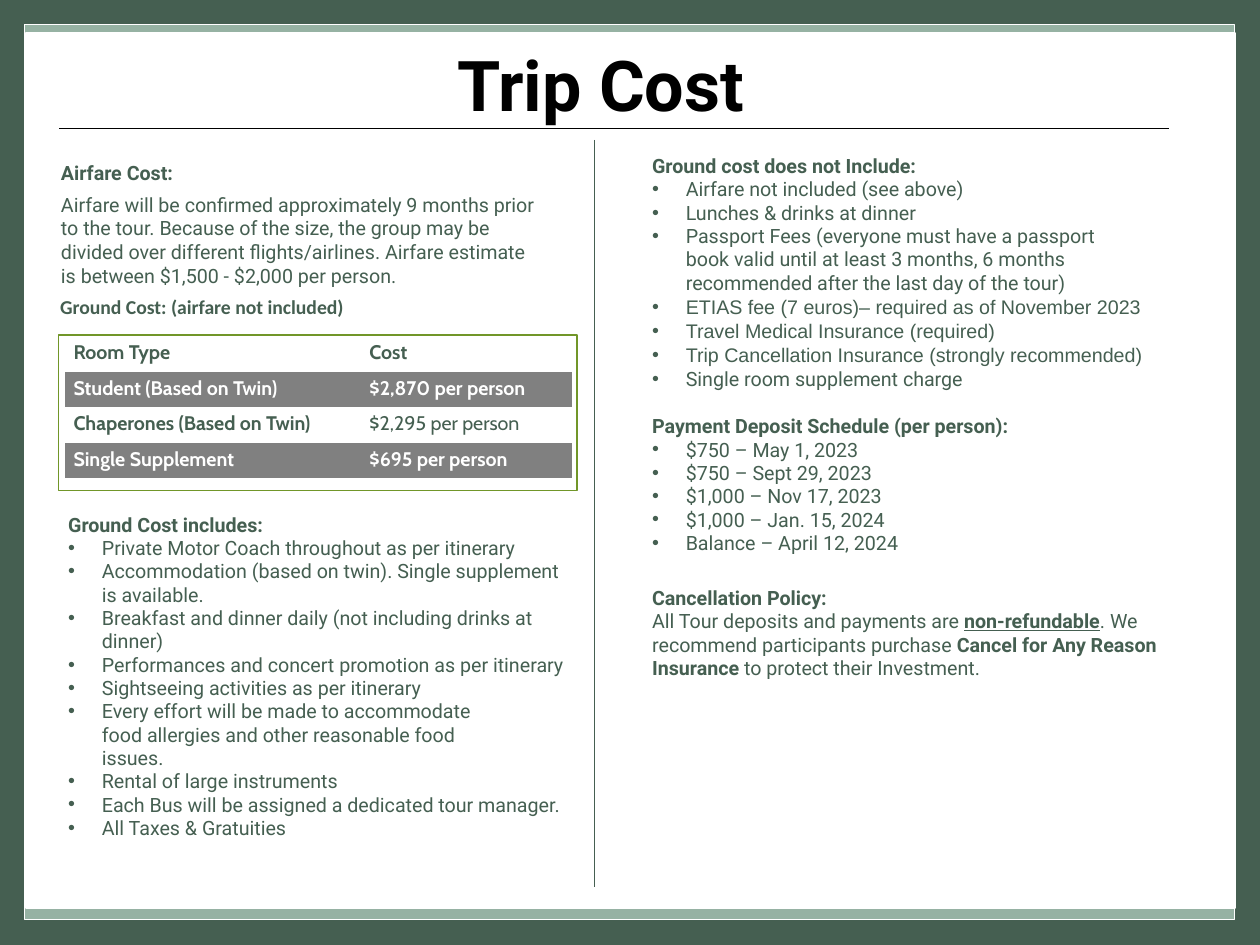
"""Builds the Trip Cost slide with prices, inclusions, deposits and policy."""
from dataclasses import dataclass

from lxml.etree import SubElement
from pptx import Presentation
from pptx.dml.color import RGBColor as RGB
from pptx.enum.shapes import MSO_CONNECTOR as LINE, MSO_SHAPE as SHAPE
from pptx.enum.text import MSO_ANCHOR as ANCHOR, MSO_AUTO_SIZE as AUTO, PP_ALIGN as ALIGN
from pptx.oxml.ns import qn
from pptx.util import Inches, Pt


@dataclass(frozen=True)
class Theme:
    green: RGB = RGB(0x45, 0x5F, 0x51)
    sage: RGB = RGB(0x96, 0xB2, 0xA3)
    lime: RGB = RGB(0x71, 0x96, 0x29)
    gray: RGB = RGB(0x80, 0x80, 0x80)
    white: RGB = RGB(0xFF, 0xFF, 0xFF)
    black: RGB = RGB(0, 0, 0)
    title_size: float = 56.9
    text_size: int = 16
    pitch: float = 18.95
    main: str = "Roboto"
    plain: str = "Arial"
    table: str = "Cabin"
    heading: str = "Calibri"


theme = Theme()


def style(run, bold=False, font=theme.main, color=theme.green, size=theme.text_size):
    run.font.name, run.font.bold, run.font.size = font, bold, Pt(size)
    run.font.color.rgb = color


def write(frame, text, bold=False, font=theme.main, bullet=False, before=0, right=0, left=0):
    first = frame.paragraphs[0]
    paragraph = frame.add_paragraph() if first.runs else first
    paragraph.text = text
    props = paragraph._p.get_or_add_pPr()
    props.set("marL", str(Inches(0.38 if bullet else left)))
    props.set("indent", str(Inches(-0.38 if bullet else 0)))
    props.set("marR", str(Inches(right)))
    if bullet:
        SubElement(props, qn("a:buFont"), typeface=theme.plain)
        SubElement(props, qn("a:buChar"), char="•")
    else:
        SubElement(props, qn("a:buNone"))
    paragraph.alignment = ALIGN.LEFT
    paragraph.line_spacing = Pt(theme.pitch)
    paragraph.space_before = Pt(before)
    paragraph.space_after = Pt(0)
    for run in paragraph.runs:
        style(run, bold, font)
    return paragraph


deck = Presentation()
deck.slide_width, deck.slide_height = Inches(14.22), Inches(10.67)
slide = deck.slides.add_slide(deck.slide_layouts[3])
slide.background.fill.solid()
slide.background.fill.fore_color.rgb = theme.green
shapes = slide.shapes
title, includes, terms = slide.placeholders

for left, top, height, fill, width in (
    (0.28, 0.28, 10.1, theme.sage, 1),
    (0.29, 0.37, 9.88, theme.white, 1.5),
):
    panel = shapes.add_shape(SHAPE.RECTANGLE, Inches(left), Inches(top), Inches(13.65), Inches(height))
    panel.shadow.inherit = False
    panel.fill.solid()
    panel.fill.fore_color.rgb = fill
    panel.line.color.rgb = theme.white
    panel.line.width = Pt(width)
    title.element.addprevious(panel.element)

airfare = shapes.add_textbox(0, 0, 0, 0)
for box, left, top, width, height in (
    (title, 5.06, 0.42, 3.52, 1.06),
    (includes, 0.67, 5.74, 5.85, 4.05),
    (airfare, 0.57, 1.77, 5.6, 1.91),
    (terms, 7.26, 1.69, 5.93, 6.48),
):
    box.left, box.top, box.width, box.height = map(Inches, (left, top, width, height))
    box.text_frame.auto_size = AUTO.NONE
    box.text_frame.word_wrap = box is not title
    box.text_frame.vertical_anchor = ANCHOR.TOP

title.text_frame.text = "Trip Cost"
title.text_frame.paragraphs[0].alignment = ALIGN.LEFT
style(title.text_frame.paragraphs[0].runs[0], True, color=theme.black, size=theme.title_size)

for x1, y1, x2, y2, color in (
    (6.71, 1.58, 6.71, 10.01, theme.green),
    (0.67, 1.45, 13.19, 1.45, theme.black),
):
    rule = shapes.add_connector(LINE.STRAIGHT, Inches(x1), Inches(y1), Inches(x2), Inches(y2))
    rule.line.color.rgb = color
    rule.line.width = Pt(0.79)
    SubElement(rule.element.spPr, qn("a:effectLst"))

write(airfare.text_frame, "Airfare Cost:", True, left=0.02)
estimate = write(
    airfare.text_frame,
    "Airfare will be confirmed approximately 9 months prior to the tour. Because of the size, "
    "the group may be divided over different flights/airlines. Airfare estimate is between "
    "$1,500 - $2,000 per person.",
    before=6.6, left=0.02)
estimate.line_spacing = Pt(19.2)
write(airfare.text_frame, "Ground Cost: (airfare not included)", True, theme.heading, before=6.9, left=0.01)

prices = (
    ("Room Type", "Cost"),
    ("Student (Based on Twin)", "$2,870 per person"),
    ("Chaperones (Based on Twin)", "$2,295 per person"),
    ("Single Supplement", "$695 per person"),
)
price_table = shapes.add_table(4, 2, Inches(0.73), Inches(3.8), Inches(5.73), Inches(1.6)).table
price_table.first_row = price_table.horz_banding = False
price_table._tbl.tblPr[0].text = "{2D5ABB26-0587-4C30-8999-92F81FD0307C}"
for column, width in zip(price_table.columns, (3.34, 2.39)):
    column.width = Inches(width)
for row, texts in enumerate(prices):
    shaded = row % 2 == 1
    for col, text in enumerate(texts):
        cell = price_table.cell(row, col)
        cell.text = text
        style(cell.text_frame.paragraphs[0].runs[0], (row, col) != (2, 1), theme.table,
              theme.white if shaded else theme.green)
        if shaded:
            cell.fill.solid()
            cell.fill.fore_color.rgb = theme.gray
        else:
            cell.fill.background()

price_frame = shapes.add_shape(SHAPE.RECTANGLE, Inches(0.66), Inches(3.78), Inches(5.85), Inches(1.76))
price_frame.shadow.inherit = False
price_frame.fill.background()
price_frame.line.color.rgb = theme.lime
price_frame.line.width = Pt(1.5)

write(includes.text_frame, "Ground Cost includes:", True)
for item, right in (
    ("Private Motor Coach throughout as per itinerary", 0),
    ("Accommodation (based on twin). Single supplement is available.", 0),
    ("Breakfast and dinner daily (not including drinks at dinner)", 0),
    ("Performances and concert promotion as per itinerary", 0),
    ("Sightseeing activities as per itinerary", 0),
    ("Every effort will be made to accommodate food allergies and other reasonable food issues.", 0.9),
    ("Rental of large instruments", 0),
    ("Each Bus will be assigned a dedicated tour manager.", 0),
    ("All Taxes & Gratuities", 0),
):
    write(includes.text_frame, item, bullet=True, right=right)

write(terms.text_frame, "Ground cost does not Include:", True)
for item, font, before, right in (
    ("Airfare not included (see above)", theme.main, 0, 0),
    ("Lunches & drinks at dinner", theme.main, 0, 0),
    ("Passport Fees (everyone must have a passport book valid until at least 3 months, "
     "6 months recommended after the last day of the tour)", theme.main, 0, 0.4),
    ("ETIAS fee (7 euros)– required as of November 2023", theme.plain, 1, 0),
    ("Travel Medical Insurance (required)", theme.plain, 0.6, 0),
    ("Trip Cancellation Insurance (strongly recommended)", theme.plain, 0.6, 0),
    ("Single room supplement charge", theme.main, 0.6, 0),
):
    write(terms.text_frame, item, font=font, bullet=True, before=before, right=right)

write(terms.text_frame, "Payment Deposit Schedule (per person):", True, before=19.2)
for deposit in (
    "$750 – May 1, 2023",
    "$750 – Sept 29, 2023",
    "$1,000 – Nov 17, 2023",
    "$1,000 – Jan. 15, 2024",
    "Balance – April 12, 2024",
):
    write(terms.text_frame, deposit, bullet=True)

write(terms.text_frame, "Cancellation Policy:", True, before=25.8)
policy = write(terms.text_frame, "All Tour deposits and payments are ")
for text, bold, underline in (
    ("non-refundable", True, True),
    (". We recommend participants purchase ", False, False),
    ("Cancel for Any Reason Insurance", True, False),
    (" to protect their Investment.", False, False),
):
    run = policy.add_run()
    run.text = text
    style(run, bold)
    run.font.underline = underline

deck.save("out.pptx")
